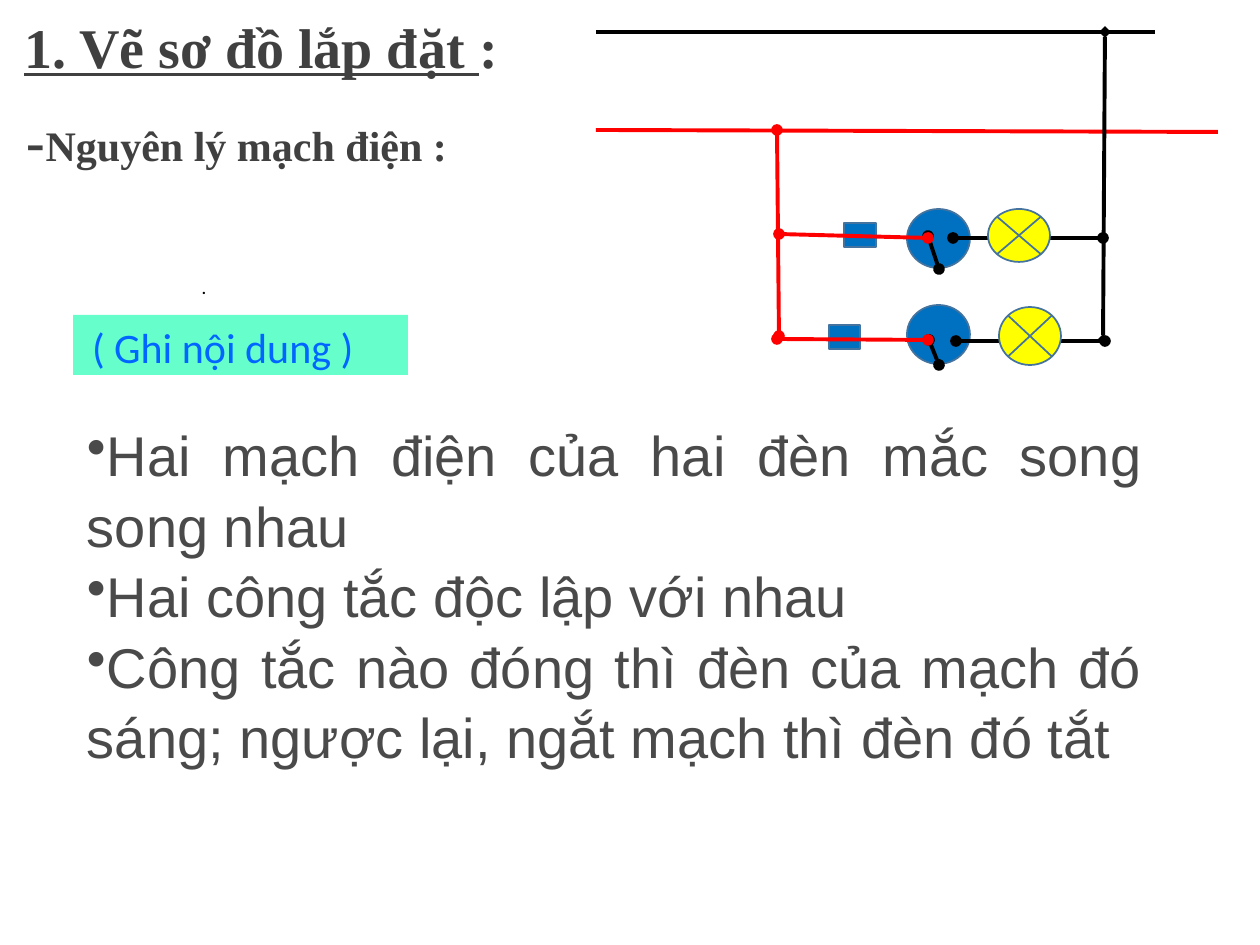
"""Build a slide explaining a circuit of two lamps, each with its own switch."""
from lxml.etree import SubElement
from pptx import Presentation
from pptx.dml.color import RGBColor
from pptx.enum.shapes import MSO_CONNECTOR, MSO_SHAPE
from pptx.enum.text import MSO_ANCHOR, PP_ALIGN
from pptx.oxml.ns import qn
from pptx.util import Pt

PX = 914400 / 126
BLACK = RGBColor(0x00, 0x00, 0x00)
RED = RGBColor(0xFF, 0x00, 0x00)
BLUE = RGBColor(0x00, 0x70, 0xC0)
OUTLINE = RGBColor(0x43, 0x73, 0x9E)
YELLOW = RGBColor(0xFF, 0xFF, 0x00)
MINT = RGBColor(0x66, 0xFF, 0xCC)
LINK_BLUE = RGBColor(0x00, 0x66, 0xFF)
HEADING_GRAY = RGBColor(0x40, 0x40, 0x40)
BODY_GRAY = RGBColor(0x4A, 0x4A, 0x4A)

TITLE = [("1. Vẽ sơ đồ lắp đặt ", {"underline": True}), (":", {})]
SUBTITLE = [("-", {"size": 32}), ("Nguyên lý mạch điện :", {})]
NOTE = "( Ghi nội dung )"
POINTS = [
    "Hai mạch điện của hai đèn mắc song song nhau",
    "Hai công tắc độc lập với nhau",
    "Công tắc nào đóng thì đèn của mạch đó sáng; ngược lại, ngắt mạch thì đèn đó tắt",
]

MAINS = [
    ((596, 130, 1218, 132), RED, None),
    ((596, 32, 1155, 32), BLACK, None),
    ((1105, 32, 1103, 340), BLACK, "diamond"),
    ((777, 130, 779, 336), RED, "oval"),
]
BRANCHES = [
    {
        "base": (907, 209, 63, 59), "lever": (928, 236, 939, 269),
        "fuse": (844, 223, 32, 24), "live": (779, 234, 928, 238),
        "neutral": (953, 238, 1103, 238), "lamp": (988, 209, 62, 53),
    },
    {
        "base": (907, 305, 63, 59), "lever": (939, 365, 929, 340),
        "fuse": (829, 325, 31, 24), "live": (777, 339, 928, 340),
        "neutral": (956, 341, 1105, 341), "lamp": (999, 307, 62, 58),
    },
]


def to_emu(lengths):
    return [round(length * PX) for length in lengths]


def add_wire(slide, ends, color, mark=None):
    wire = slide.shapes.add_connector(MSO_CONNECTOR.STRAIGHT, *to_emu(ends))
    wire.line.color.rgb = color
    wire.line.width = Pt(2.25)
    if mark:
        line = wire.line._get_or_add_ln()
        for tag in ("a:headEnd", "a:tailEnd"):
            SubElement(line, qn(tag), type=mark)
    SubElement(wire._element.spPr, qn("a:effectLst"))


def add_part(slide, kind, box, fill, outline=OUTLINE):
    shape = slide.shapes.add_shape(kind, *to_emu(box))
    shape.shadow.inherit = False
    shape.fill.solid()
    shape.fill.fore_color.rgb = fill
    if outline is None:
        shape.line.fill.background()
    else:
        shape.line.color.rgb = outline
        shape.line.width = Pt(1)
    return shape


def add_text_box(slide, box):
    return slide.shapes.add_textbox(*to_emu(box))


def write(shape, paragraphs, *, font, size, color, bold=False, bullet=None,
          align=PP_ALIGN.LEFT, anchor=MSO_ANCHOR.TOP, spacing=1.0, after=0, inset=13):
    frame = shape.text_frame
    frame.word_wrap = True
    frame.vertical_anchor = anchor
    frame.margin_left = round(inset * PX)
    for index, runs in enumerate(paragraphs):
        paragraph = frame.add_paragraph() if index else frame.paragraphs[0]
        if bullet:
            SubElement(paragraph._p.get_or_add_pPr(), qn("a:buChar"), char=bullet)
        paragraph.alignment = align
        paragraph.line_spacing = spacing
        paragraph.space_before = Pt(0)
        paragraph.space_after = Pt(after)
        for text, changes in runs:
            run = paragraph.add_run()
            run.text = text
            run.font.name = font
            run.font.size = Pt(changes.get("size", size))
            run.font.bold = bold
            run.font.underline = changes.get("underline", False)
            run.font.color.rgb = color


def draw_circuit(slide):
    for ends, color, mark in MAINS:
        add_wire(slide, ends, color, mark)
    for branch in BRANCHES:
        add_part(slide, MSO_SHAPE.OVAL, branch["base"], BLUE)
        add_wire(slide, branch["lever"], BLACK, "oval")
        add_part(slide, MSO_SHAPE.RECTANGLE, branch["fuse"], BLUE)
        add_wire(slide, branch["live"], RED, "oval")
        add_wire(slide, branch["neutral"], BLACK, "oval")
        add_part(slide, MSO_SHAPE.FLOWCHART_SUMMING_JUNCTION, branch["lamp"], YELLOW)


def main():
    presentation = Presentation()
    presentation.slide_width, presentation.slide_height = to_emu((1260, 945))
    slide = presentation.slides.add_slide(presentation.slide_layouts[5])

    title = slide.shapes.title
    title.left, title.top, title.width, title.height = to_emu((11, 6, 509, 80))
    heading = {"font": "Times New Roman", "color": HEADING_GRAY, "bold": True,
               "anchor": MSO_ANCHOR.BOTTOM, "after": 3}
    write(title, [TITLE], size=32, **heading)
    write(add_text_box(slide, (14, 102, 459, 77)), [SUBTITLE], size=24, **heading)

    write(add_text_box(slide, (189, 215, 640, 89)), [[(".", {})]], font="Calibri", size=9,
          color=BLACK, bold=True, anchor=MSO_ANCHOR.BOTTOM, spacing=0.9)

    draw_circuit(slide)

    note = add_part(slide, MSO_SHAPE.RECTANGLE, (73, 315, 335, 60), MINT, None)
    write(note, [[(NOTE, {})]], font="Calibri", size=24, color=LINK_BLUE, inset=19)

    write(add_text_box(slide, (74, 411, 1081, 352)), [[(point, {})] for point in POINTS],
          font="Arial", size=32, color=BODY_GRAY, bullet="•",
          align=PP_ALIGN.JUSTIFY, spacing=1.05)

    presentation.save("out.pptx")


if __name__ == "__main__":
    main()
